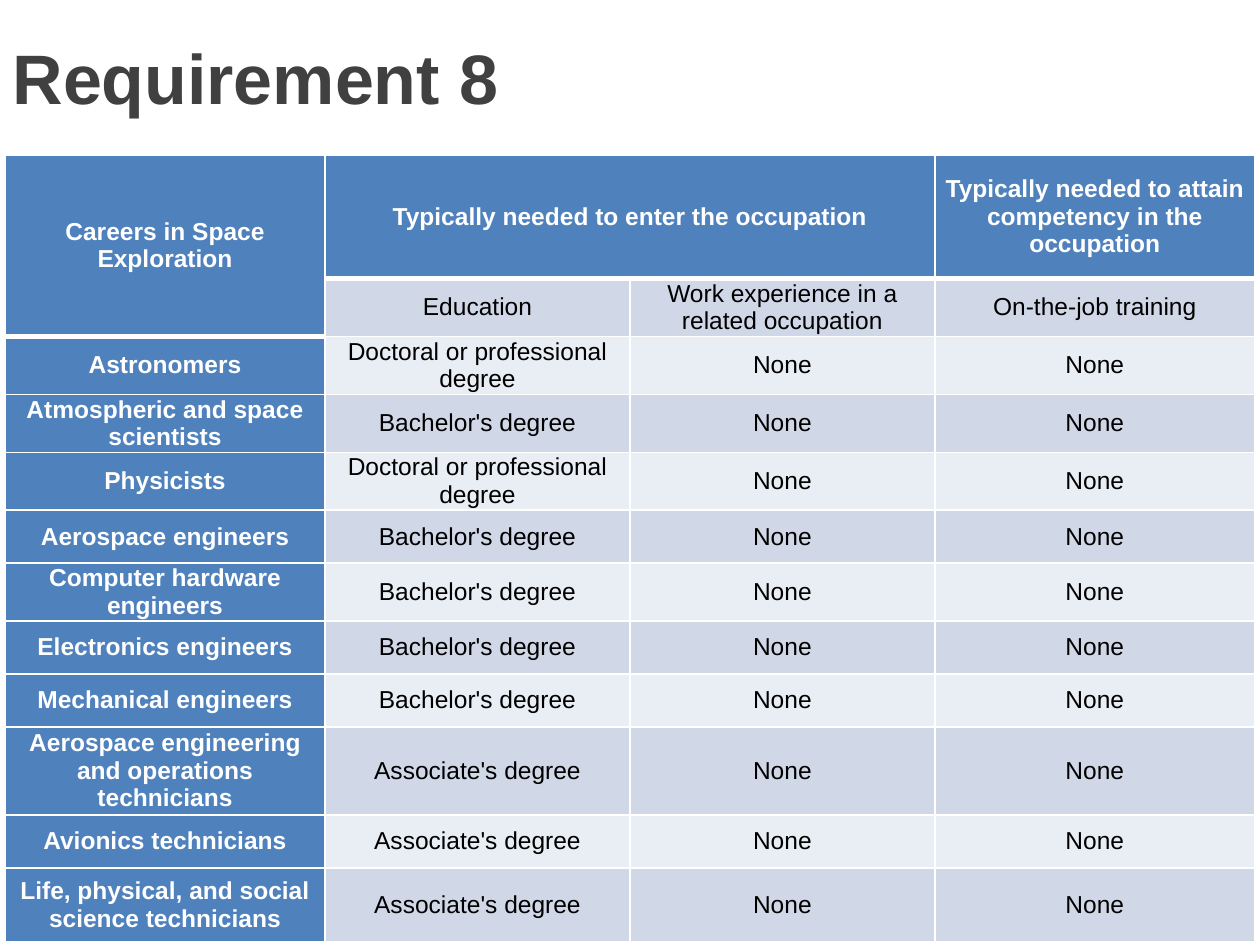
from lxml import etree
from pptx import Presentation
from pptx import util as u
from pptx.dml.color import RGBColor
from pptx.enum import text
from pptx.oxml.ns import qn

# Content
TITLE = "Requirement 8"
HEADINGS = [
    ("Careers in Space\nExploration", "Typically needed to enter the occupation", "",
     "Typically needed to attain competency in the occupation"),
    ("", "Education", "Work experience in a related occupation", "On-the-job training"),
]
DOCTORAL = "Doctoral or professional degree"
BACHELOR = "Bachelor's degree"
ASSOCIATE = "Associate's degree"
CAREERS = [
    ("Astronomers", DOCTORAL),
    ("Atmospheric and space scientists", BACHELOR),
    ("Physicists", DOCTORAL),
    ("Aerospace engineers", BACHELOR),
    ("Computer hardware engineers", BACHELOR),
    ("Electronics engineers", BACHELOR),
    ("Mechanical engineers", BACHELOR),
    ("Aerospace engineering and operations technicians", ASSOCIATE),
    ("Avionics technicians", ASSOCIATE),
    ("Life, physical, and social science technicians", ASSOCIATE),
]
ROWS = HEADINGS + [(career, degree, "None", "None") for career, degree in CAREERS]

# Look
COLOURS = {"title": "404040", "header": "4F81BD", "odd": "D0D8E8", "even": "E9EDF4",
           "light": "FFFFFF", "dark": "000000"}
FONT = "Arial"
COLUMN_WIDTHS = [2.54, 2.42, 2.42, 2.54]
ROW_HEIGHTS = [0.98, 0.46, 0.46, 0.46, 0.46, 0.42, 0.46, 0.42, 0.42, 0.7, 0.42, 0.59]
THIN, THICK = 1, 3


def format_text(frame, size, colour, bold, align):
    for para in frame.paragraphs:
        para.alignment = align
        for span in para.runs:
            span.font.name = FONT
            span.font.size = u.Pt(size)
            span.font.bold = bold
            span.font.color.rgb = RGBColor.from_string(COLOURS[colour])


def set_borders(cell, top, bottom):
    properties = cell._tc.get_or_add_tcPr()
    widths = {"a:lnL": THIN, "a:lnR": THIN, "a:lnT": top, "a:lnB": bottom}
    for index, (tag, width) in enumerate(widths.items()):
        line = etree.Element(qn(tag), w=str(u.Pt(width)))
        fill = etree.SubElement(line, qn("a:solidFill"))
        etree.SubElement(fill, qn("a:srgbClr"), val=COLOURS["light"])
        properties.insert(index, line)


def fill_cell(cell, wording, row, column):
    header = row == 0 or column == 0
    shade = "header" if header else "odd" if row % 2 else "even"
    cell.fill.solid()
    cell.fill.fore_color.rgb = RGBColor.from_string(COLOURS[shade])
    cell.vertical_anchor = text.MSO_ANCHOR.MIDDLE
    cell.margin_left = cell.margin_right = u.Inches(0.05)
    cell.margin_top = cell.margin_bottom = 0
    cell.text_frame.text = wording
    format_text(cell.text_frame, 14, "light" if header else "dark", header,
                text.PP_ALIGN.CENTER)
    # The heading block ends one row lower in the first column
    last_heading = 1 if column == 0 else 0
    set_borders(cell, THICK if row == last_heading + 1 else THIN,
                THICK if row <= last_heading else THIN)


def main():
    deck = Presentation()
    deck.slide_width, deck.slide_height = u.Inches(10), u.Inches(7.5)
    page = deck.slides.add_slide(deck.slide_layouts[5])

    # Title
    title = page.shapes.title
    title.left, title.top = 0, u.Inches(0.02)
    title.width, title.height = deck.slide_width, u.Inches(1.17)
    title.text_frame.text = TITLE
    title.text_frame.vertical_anchor = text.MSO_ANCHOR.MIDDLE
    format_text(title.text_frame, 40, "title", True, text.PP_ALIGN.LEFT)

    # Careers table
    table = page.shapes.add_table(
        len(ROWS), len(COLUMN_WIDTHS), u.Inches(0.04), u.Inches(1.23),
        u.Inches(sum(COLUMN_WIDTHS)), u.Inches(sum(ROW_HEIGHTS))).table
    table.first_col = True
    for column, width in zip(table.columns, COLUMN_WIDTHS):
        column.width = u.Inches(width)
    for row, height in zip(table.rows, ROW_HEIGHTS):
        row.height = u.Inches(height)
    for row, wordings in enumerate(ROWS):
        for column, wording in enumerate(wordings):
            fill_cell(table.cell(row, column), wording, row, column)
    table.cell(0, 0).merge(table.cell(1, 0))
    table.cell(0, 1).merge(table.cell(0, 2))

    deck.save("out.pptx")


if __name__ == "__main__":
    main()
